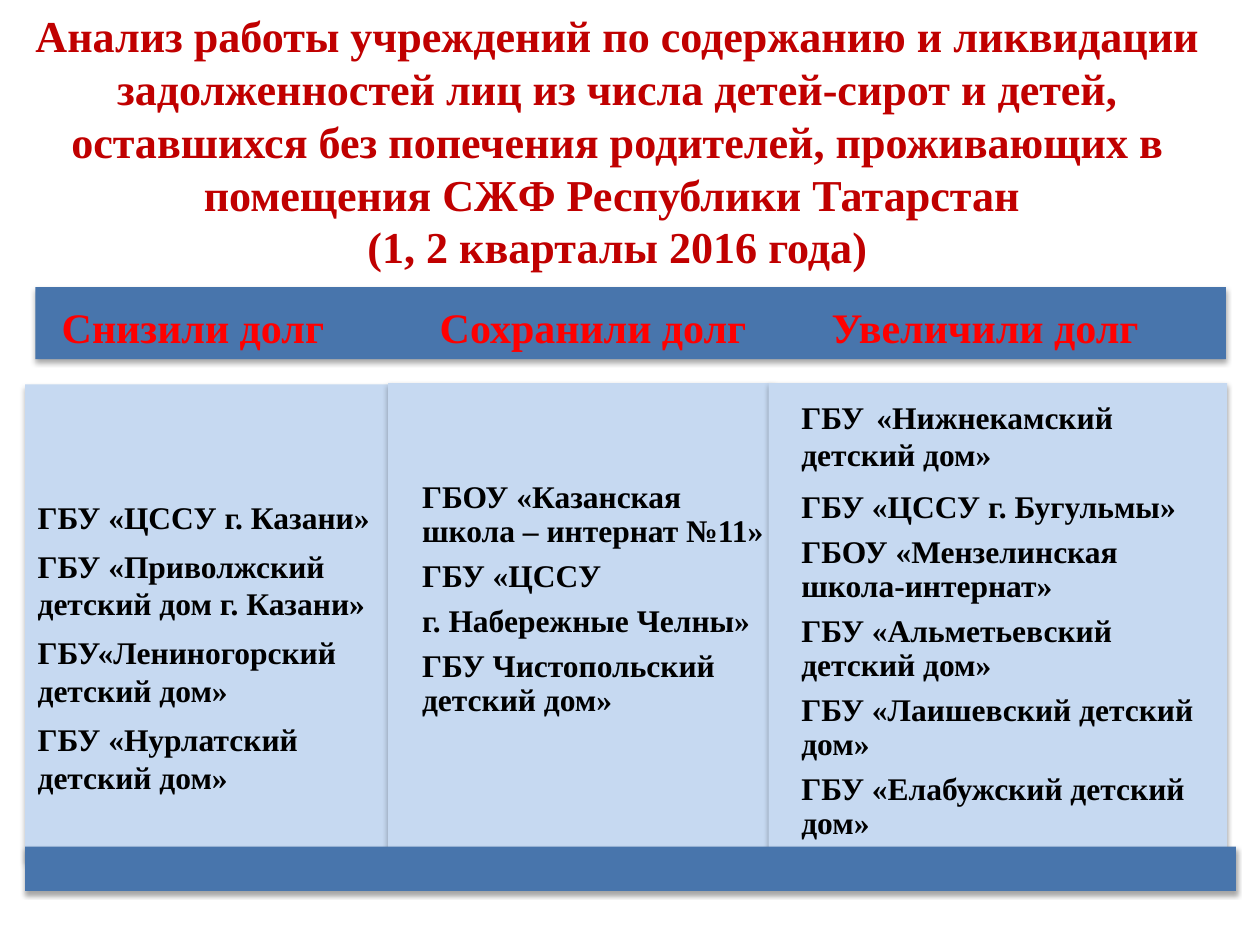
"""Build a slide comparing how institutions changed their housing debt."""
from lxml import etree
from pptx import Presentation
from pptx.dml.color import RGBColor
from pptx.enum.shapes import MSO_SHAPE
from pptx.enum.text import MSO_ANCHOR, MSO_AUTO_SIZE, PP_ALIGN
from pptx.oxml import parse_xml
from pptx.oxml.ns import qn
from pptx.util import Inches, Pt

RECT = MSO_SHAPE.RECTANGLE
TOP, MIDDLE = MSO_ANCHOR.TOP, MSO_ANCHOR.MIDDLE
LEFT, CENTER = PP_ALIGN.LEFT, PP_ALIGN.CENTER
FIXED = MSO_AUTO_SIZE.NONE
FONT = "Times New Roman"
BLUE = RGBColor(0x48, 0x75, 0xAC)
PALE = RGBColor(0xC6, 0xD9, 0xF1)
MAROON = RGBColor(0xC0, 0x00, 0x00)
RED = RGBColor(0xFF, 0x00, 0x00)
BLACK = RGBColor(0x00, 0x00, 0x00)
SHADOW = (
    '<a:effectLst xmlns:a="http://schemas.openxmlformats.org/drawingml/2006/main">'
    '<a:outerShdw blurRad="39370" dist="22860" dir="5400000" rotWithShape="0">'
    '<a:srgbClr val="000000"><a:alpha val="35000"/></a:srgbClr>'
    '</a:outerShdw></a:effectLst>'
)

TITLE = (
    "Анализ работы учреждений по содержанию и ликвидации задолженностей лиц "
    "из числа детей-сирот и детей, оставшихся без попечения родителей, "
    "проживающих в помещения СЖФ Республики Татарстан \v(1, 2 кварталы 2016 года)"
)
HEADS = ["Снизили долг", "Сохранили долг", "Увеличили долг"]
TABS = [3, 6.11]
COLUMNS = [
    {
        "box": (0.2, 3.05, 2.91, 3.78), "pad": (0.1, 0.9, 0.1), "lead": 1.0,
        "items": [
            ["ГБУ «ЦССУ г. Казани»"],
            ["ГБУ «Приволжский детский дом г. Казани»"],
            ["ГБУ«Лениногорский детский дом»"],
            ["ГБУ «Нурлатский детский дом»"],
        ],
    },
    {
        "box": (3.08, 3.04, 3.06, 3.79), "pad": (0.27, 0.78, 0.08), "lead": 0.9,
        "items": [
            ["ГБОУ «Казанская школа – интернат №11»"],
            ["ГБУ «ЦССУ"],
            ["г. Набережные Челны»"],
            ["ГБУ Чистопольский детский дом»"],
        ],
    },
    {
        "box": (6.1, 3.04, 3.64, 3.73), "pad": (0.26, 0.03, 0.07), "lead": 0.9,
        "items": [
            ["ГБУ", " ", "«Нижнекамский детский дом»"],
            ["ГБУ «ЦССУ г. Бугульмы»"],
            ["ГБОУ «Мензелинская школа-интернат»"],
            ["ГБУ «Альметьевский детский дом»"],
            ["ГБУ «Лаишевский детский дом»"],
            ["ГБУ «Елабужский детский дом»"],
        ],
    },
]


def style(run, size, color):
    font = run.font
    font.name, font.size, font.bold = FONT, Pt(size), True
    font.color.rgb = color


def panel(slide, box, fill):
    shape = slide.shapes.add_shape(RECT, *map(Inches, box))
    shape.fill.solid()
    shape.fill.fore_color.rgb = fill
    shape.line.fill.background()
    shape._element.spPr.append(parse_xml(SHADOW))
    return shape


def frame(shape, pad, anchor):
    text = shape.text_frame
    text.word_wrap, text.vertical_anchor = True, anchor
    left, top, right = map(Inches, pad)
    text.margin_left, text.margin_top, text.margin_right = left, top, right
    text.margin_bottom = 0
    return text


def header(slide):
    text = frame(panel(slide, (0.28, 2.28, 9.45, 0.57), BLUE), (0.21, 0.05, 0.12), MIDDLE)
    para = text.paragraphs[0]
    para.text = "\t".join(HEADS)
    para.alignment = LEFT
    stops = etree.SubElement(para._p.get_or_add_pPr(), qn("a:tabLst"))
    for tab in TABS:
        etree.SubElement(stops, qn("a:tab"), pos=str(Inches(tab)), algn="l")
    for run in para.runs:
        style(run, 24, RED)


def column(slide, data):
    text = frame(panel(slide, data["box"], PALE), data["pad"], TOP)
    for i, item in enumerate(data["items"]):
        para = text.add_paragraph() if i else text.paragraphs[0]
        para.alignment, para.line_spacing = LEFT, data["lead"]
        sizes = [28 if part == " " else 18 for part in item]
        para.space_after = Pt(0.35 * max(sizes))
        for part, size in zip(item, sizes):
            run = para.add_run()
            run.text = part
            style(run, size, BLACK)


def main():
    deck = Presentation()
    deck.slide_width, deck.slide_height = Inches(10), Inches(7.5)
    slide = deck.slides.add_slide(deck.slide_layouts[5])
    title = slide.shapes.title
    title.left, title.top, title.width, title.height = map(Inches, (0, 0.68, 9.8, 0.87))
    text = title.text_frame
    text.auto_size, text.vertical_anchor = FIXED, MIDDLE
    para = text.paragraphs[0]
    para.text, para.alignment = TITLE, CENTER
    for run in para.runs:
        style(run, 25.2, MAROON)
    header(slide)
    for data in COLUMNS:
        column(slide, data)
    panel(slide, (0.2, 6.72, 9.61, 0.35), BLUE)
    deck.save("out.pptx")


if __name__ == "__main__":
    main()
